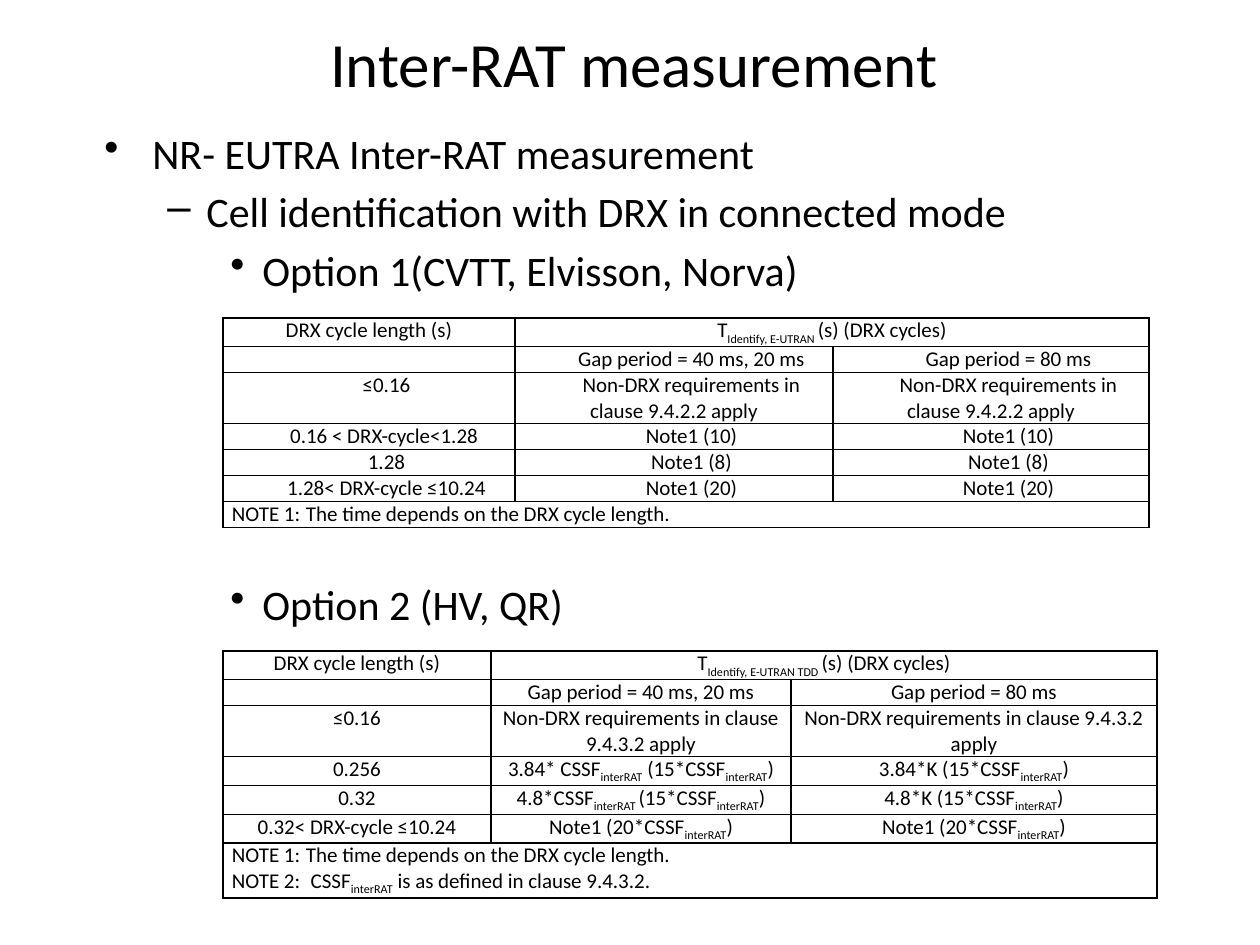
import pptx
import pptx.dml.color
import pptx.enum.text
import pptx.oxml
import pptx.oxml.ns
import pptx.util

PX = 914400 / 126
COLORS = {"ink": "000000"}
FONT = "Calibri"
ALIGN = pptx.enum.text.PP_ALIGN


def px(count):
    return pptx.util.Emu(round(count * PX))


def write(para, text, size, align=ALIGN.LEFT, margin=0, indent=0, bullet=None):
    """Fill a paragraph; every second piece between bars is a subscript."""
    para.alignment = align
    props = para._p.get_or_add_pPr()
    props.set("marL", str(px(margin)))
    props.set("indent", str(px(indent)))
    if bullet:
        para.space_before = pptx.util.Pt(size * 0.2)
        mark = pptx.oxml.parse_xml(
            f'<a:buChar {pptx.oxml.ns.nsdecls("a")} char="{bullet}"/>')
        props.append(mark)
    for number, piece in enumerate(text.split("|")):
        span = para.add_run()
        span.text = piece
        span.font.name = FONT
        span.font.size = pptx.util.Pt(size)
        span.font.color.rgb = pptx.dml.color.RGBColor.from_string(COLORS["ink"])
        if number % 2:
            span.font._element.set("baseline", "-25000")


deck = pptx.Presentation()
deck.slide_width, deck.slide_height = px(1260), px(945)
page = deck.slides.add_slide(deck.slide_layouts[5])

# Title
title = page.shapes.title
title.left, title.top, title.width, title.height = px(74), px(-1), px(1134), px(126)
title.text_frame.vertical_anchor = pptx.enum.text.MSO_ANCHOR.MIDDLE
write(title.text_frame.paragraphs[0], "Inter-RAT measurement ", 36, ALIGN.CENTER)

# Bulleted lines: (level, text), with margin, indent and mark by level
LEVELS = [(48, -48, "•"), (102, -39, "–"), (158, -32, "•")]
outlines = [
    (121, 149, [(0, "NR- EUTRA Inter-RAT measurement"),
                (1, "Cell identification with DRX in connected mode"),
                (2, "Option 1(CVTT, Elvisson, Norva)")]),
    (572, 69, [(2, "Option 2 (HV, QR)")]),
]
for top, height, lines in outlines:
    box = page.shapes.add_textbox(px(92), px(top), px(1134), px(height))
    box.text_frame.word_wrap = True
    for number, (level, text) in enumerate(lines):
        para = box.text_frame.add_paragraph() if number else box.text_frame.paragraphs[0]
        para.level = level
        margin, indent, bullet = LEVELS[level]
        write(para, text, 24, ALIGN.LEFT, margin, indent, bullet)

# Tables: the header spans two columns and the notes span three
GAPS = ["", "Gap period = 40 ms, 20 ms", "Gap period = 80 ms"]
NOTE = "NOTE 1:\tThe time depends on the DRX cycle length."
tables = [
    {"top": 318, "columns": [292, 318, 316], "indent": 35,
     "heights": [28, 26, 51, 26, 26, 26, 26],
     "rows": [
         ["DRX cycle length (s)", "T|Identify, E-UTRAN |(s) (DRX cycles)"],
         GAPS,
         ["≤0.16"] + ["Non-DRX requirements in clause 9.4.2.2 apply"] * 2,
         ["0.16 < DRX-cycle<1.28 "] + ["Note1 (10)"] * 2,
         ["1.28"] + ["Note1 (8)"] * 2,
         ["1.28< DRX-cycle ≤10.24"] + ["Note1 (20)"] * 2,
         [NOTE]]},
    {"top": 651, "columns": [268, 300, 366], "indent": 0,
     "heights": [28, 26, 51, 28, 29, 28, 55],
     "rows": [
         ["DRX cycle length (s)", "T|Identify, E-UTRAN TDD |(s) (DRX cycles)"],
         GAPS,
         ["≤0.16"] + ["Non-DRX requirements in clause 9.4.3.2 apply"] * 2,
         ["0.256", "3.84* CSSF|interRAT| (15*CSSF|interRAT|)",
          "3.84*K (15*CSSF|interRAT|)"],
         ["0.32", "4.8*CSSF|interRAT |(15*CSSF|interRAT|)",
          "4.8*K (15*CSSF|interRAT|)"],
         ["0.32< DRX-cycle ≤10.24"] + ["Note1 (20*CSSF|interRAT|)"] * 2,
         [NOTE + "\nNOTE 2:\t CSSF|interRAT| is as defined in clause 9.4.3.2."]]},
]
for content in tables:
    rows, columns, heights = content["rows"], content["columns"], content["heights"]
    last = len(rows) - 1
    table = page.shapes.add_table(len(rows), 3, px(223), px(content["top"]),
                                  px(sum(columns)), px(sum(heights))).table
    table.first_row = table.horz_banding = False
    for column, width in zip(table.columns, columns):
        column.width = px(width)
    for row, height in zip(table.rows, heights):
        row.height = px(height)
    table.cell(0, 1).merge(table.cell(0, 2))
    table.cell(last, 0).merge(table.cell(last, 2))

    # Plain cells with a thin border on every side
    for cell in table.iter_cells():
        cell.margin_left = cell.margin_right = px(9)
        cell.margin_top = cell.margin_bottom = 0
        for side in "LRTB":
            cell._tc.get_or_add_tcPr().append(pptx.oxml.parse_xml(
                f'<a:ln{side} {pptx.oxml.ns.nsdecls("a")} w="12700"><a:solidFill>'
                f'<a:srgbClr val="{COLORS["ink"]}"/></a:solidFill></a:ln{side}>'))
        cell.fill.background()
        end = cell.text_frame.paragraphs[0]._p.get_or_add_endParaRPr()
        end.set("sz", "1200")

    # Cell text
    for r, texts in enumerate(rows):
        for c, text in enumerate(texts):
            frame = table.cell(r, c).text_frame
            for number, line in enumerate(text.split("\n") if text else []):
                para = frame.add_paragraph() if number else frame.paragraphs[0]
                if r == last:
                    write(para, line, 12, ALIGN.LEFT, 74, -74)
                else:
                    write(para, line, 12, ALIGN.CENTER, 0, content["indent"] if r else 0)

deck.save("out.pptx")
